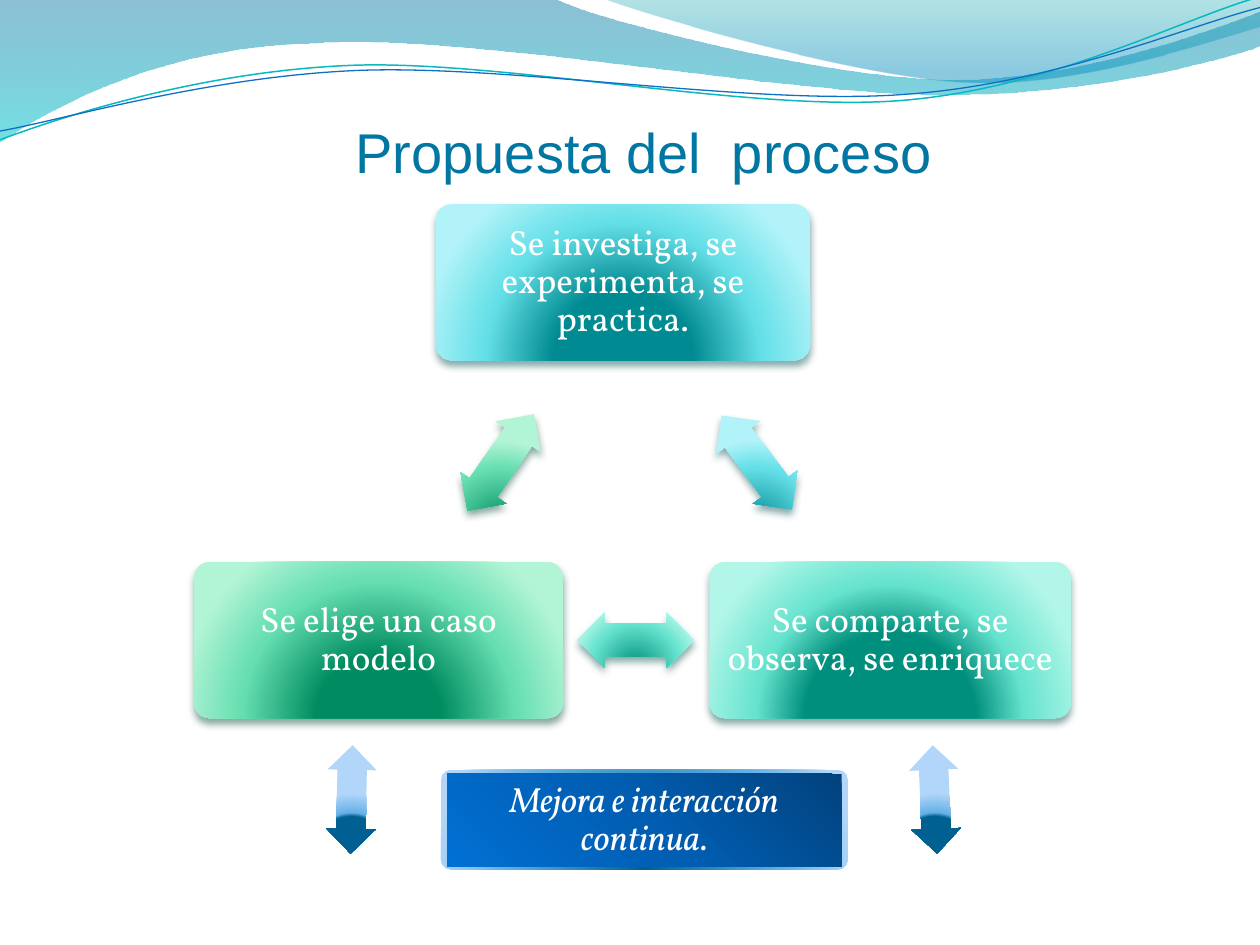
from dataclasses import dataclass

from lxml.etree import SubElement
from pptx import Presentation
from pptx.dml.color import RGBColor
from pptx.enum.shapes import MSO_SHAPE
from pptx.enum.text import MSO_ANCHOR, PP_ALIGN
from pptx.oxml.ns import qn
from pptx.util import Inches, Pt


@dataclass(frozen=True)
class Family:
    """Dark, middle and light gradient colours with their shadow."""
    dark: str
    mid: str
    light: str
    shadow: str = ""

    def stops(self, start):
        """Return gradient stops whose dark core ends at start percent."""
        return [(start, self.dark, 100), (68, self.mid, 100), (100, self.light, 100)]


@dataclass(frozen=True)
class Theme:
    """Colours, fonts and type sizes of the slide."""
    title: str = "0076A3"
    text: str = "FFFFFF"
    teal_line: str = "0AB8BF"
    blue_line: str = "0F6FC6"
    title_font: str = "Arial"
    body_font: str = "Vollkorn"
    title_size: int = 32
    body_size: int = 20
    cyan: Family = Family("008A91", "64DFE7", "B1F3F9", "024B4E")
    aqua: Family = Family("008F7C", "65E3CE", "B1F6E8", "034C44")
    green: Family = Family("008C60", "65DEB0", "B2F4D6", "044A37")
    blue: Family = Family("006091", "64B1E7", "B1D6F9")
    wave: tuple = ((0, "0074A1", 45), (100, "00C6CF", 55))
    crest: tuple = ((0, "00A1A9", 30), (80, "008BBF", 45))
    plate: tuple = ((0, "01427D", 100), (50, "015EB2", 100), (100, "0170D4", 100))


THEME = Theme()


def add_color(parent, color, alpha):
    """Append an RGB colour with an opacity in percent."""
    clr = SubElement(parent, qn("a:srgbClr"), val=color)
    if alpha < 100:
        SubElement(clr, qn("a:alpha"), val=str(alpha * 1000))


def set_gradient(sp, stops, angle=None):
    """Fill a shape linearly at an angle, or from a circle below it."""
    sp.fill.background()
    old = sp._element.spPr.find(qn("a:noFill"))
    grad = SubElement(sp._element.spPr, qn("a:gradFill"), rotWithShape="0")
    old.getparent().replace(old, grad)
    gs_list = SubElement(grad, qn("a:gsLst"))
    for pos, color, alpha in stops:
        add_color(SubElement(gs_list, qn("a:gs"), pos=str(pos * 1000)), color, alpha)
    if angle is None:
        circle = SubElement(grad, qn("a:path"), path="circle")
        SubElement(circle, qn("a:fillToRect"), l="50000", t="130000", r="50000", b="-30000")
    else:
        SubElement(grad, qn("a:lin"), ang=str(angle * 60000), scaled="0")


def add_shadow(sp, color):
    """Give a shape a soft shadow straight below."""
    effects = sp._element.spPr.find(qn("a:effectLst"))
    shadow = SubElement(effects, qn("a:outerShdw"), blurRad=str(Pt(4.5)), dist=str(Pt(3)),
                        dir="5400000", rotWithShape="0")
    add_color(shadow, color, 48)


def add_block(slide, kind, box, stops, angle=None, shadow=""):
    """Place a borderless gradient shape."""
    sp = slide.shapes.add_shape(kind, *map(Inches, box))
    sp.line.fill.background()
    sp.shadow.inherit = False
    set_gradient(sp, stops, angle)
    if shadow:
        add_shadow(sp, shadow)
    return sp


def add_card(slide, box, family, start):
    """Place a rounded card."""
    sp = add_block(slide, MSO_SHAPE.ROUNDED_RECTANGLE, box, family.stops(start),
                   shadow=family.shadow)
    sp.adjustments[0] = 0.1
    return sp


def add_arrow(slide, box, family, start, rotation):
    """Place a rotated double-headed arrow."""
    sp = add_block(slide, MSO_SHAPE.LEFT_RIGHT_ARROW, box, family.stops(start),
                   shadow=family.shadow)
    sp.adjustments[0], sp.adjustments[1] = 0.6, 0.5
    sp.rotation = rotation


def set_text(sp, text, italic=False):
    """Write centred body text in a shape."""
    tf = sp.text_frame
    tf.word_wrap = True
    tf.vertical_anchor = MSO_ANCHOR.MIDDLE
    tf.margin_left = tf.margin_right = Inches(0.05)
    tf.margin_top = tf.margin_bottom = Inches(0.08)
    p = tf.paragraphs[0]
    p.alignment = PP_ALIGN.CENTER
    p.line_spacing = 0.9
    r = p.add_run()
    r.text = text
    r.font.name, r.font.size = THEME.body_font, Pt(THEME.body_size)
    r.font.italic = italic
    r.font.color.rgb = RGBColor.from_string(THEME.text)


def add_outline(slide, origin, start, segments, close):
    """Draw an outline of lines (2 numbers) and cubic curves (6 numbers)."""
    pairs = [start] + [seg[i:i + 2] for seg in segments for i in range(0, len(seg), 2)]
    points = [(Inches(origin[0] + x), Inches(origin[1] + y)) for x, y in pairs]
    builder = slide.shapes.build_freeform(*points[0], scale=1.0)
    builder.add_line_segments(points[1:], close=close)
    sp = builder.convert_to_shape()
    sp.shadow.inherit = False
    steps = iter(list(sp._element.iter(qn("a:lnTo"))))
    for seg in segments:
        first = next(steps)
        if len(seg) == 6:
            first.tag = qn("a:cubicBezTo")
            for _ in range(2):
                step = next(steps)
                first.append(step[0])
                step.getparent().remove(step)
    return sp


def add_waves(slide, box):
    """Draw the wave band and its two lines along the top."""
    origin = box[:2]
    bands = [
        (THEME.wave, (0, 0), [
            (4.4, -0.01), (4.76, 0.17, 6.64, 0.63, 7.58, 0.63), (8.53, 0.63, 9.58, 0.26, 10, 0.09),
            (10.01, 0.36), (9.83, 0.44, 8.7, 0.76, 7.46, 0.75), (6.22, 0.75, 3.82, 0.28, 2.57, 0.34),
            (1.29, 0.36, 0.46, 0.83, -0.01, 1.13)]),
        (THEME.crest, (4.79, -0.01), [
            (5.09, 0.11, 6.82, 0.62, 7.69, 0.65), (8.56, 0.69, 9.61, 0.32, 10, 0.21), (10, 0)]),
    ]
    for stops, start, segments in bands:
        sp = add_outline(slide, origin, start, segments, True)
        sp.line.fill.background()
        set_gradient(sp, stops, 90)
    lines = [
        (THEME.teal_line, 0.85, (0, 1.11), [
            (0.48, 0.93, 1.58, 0.57, 2.77, 0.52), (3.95, 0.47, 5.93, 0.89, 7.13, 0.8),
            (8.33, 0.71, 9.38, 0.15, 9.98, -0.02)]),
        (THEME.blue_line, 0.75, (0, 1.04), [
            (0.47, 0.96, 1.64, 0.61, 2.83, 0.56), (4.03, 0.51, 5.97, 0.84, 7.17, 0.75),
            (8.36, 0.67, 9.41, 0.21, 10, 0.06)]),
    ]
    for color, width, start, segments in lines:
        sp = add_outline(slide, origin, start, segments, False)
        sp.fill.background()
        sp.line.color.rgb = RGBColor.from_string(color)
        sp.line.width = Pt(width)


def add_title(slide, box):
    """Move and format the title placeholder."""
    sp = slide.shapes.title
    sp.left, sp.top, sp.width, sp.height = map(Inches, box)
    tf = sp.text_frame
    tf.vertical_anchor = MSO_ANCHOR.BOTTOM
    tf.margin_left, tf.margin_right, tf.margin_bottom = Inches(1.36), 0, 0
    p = tf.paragraphs[0]
    p.alignment = PP_ALIGN.CENTER
    r = p.add_run()
    r.text = "Propuesta del  proceso"
    r.font.name, r.font.size = THEME.title_font, Pt(THEME.title_size)
    r.font.color.rgb = RGBColor.from_string(THEME.title)


def add_cycle(slide, box):
    """Build the three-step cycle with its arrows."""
    x, y, w, h = box
    card_h, low = 1.24, y + h - 1.24
    cards = [
        (x + 1.92, y, 2.97, THEME.cyan, 34, "Se investiga, se experimenta, se practica."),
        (x + w - 2.87, low, 2.87, THEME.aqua, 43, "Se comparte, se observa, se enriquece"),
        (x, low, 2.93, THEME.green, 31, "Se elige un caso modelo"),
    ]
    for left, top, width, family, start, text in cards:
        set_text(add_card(slide, (left, top, width, card_h), family, start), text)
    arrows = [(4, 1.83, THEME.cyan, 53.2), (3.04, 3.24, THEME.aqua, 180),
              (1.97, 1.83, THEME.green, 304.5)]
    for dx, dy, family, rotation in arrows:
        add_arrow(slide, (x + dx, y + dy, 0.93, 0.44), family, 0, rotation)


def add_improvement(slide, box):
    """Build the bottom plate between its two vertical arrows."""
    x, y, w, h = box
    arrow_w = 0.86
    for left, rotation in ((x, 91.1), (x + w - arrow_w, 87.6)):
        add_arrow(slide, (left, y + 0.04, arrow_w, 0.39), THEME.blue, 62, rotation)
    add_card(slide, (x + 1.14, y, 3.23, h), THEME.blue, 0)
    plate = add_block(slide, MSO_SHAPE.RECTANGLE, (x + 1.19, y + 0.03, 3.13, h - 0.05),
                      THEME.plate, 135)
    set_text(plate, "Mejora e interacción continua.", italic=True)


def main():
    """Build and save the presentation."""
    prs = Presentation()
    prs.slide_width, prs.slide_height = Inches(10), Inches(7.5)
    s = prs.slides.add_slide(prs.slide_layouts[5])
    add_waves(s, (0, 0, 10, 1.13))
    add_title(s, (0, 0.37, 8.86, 1.1))
    add_cycle(s, (1.54, 1.62, 6.96, 4.08))
    add_improvement(s, (2.36, 6.11, 5.49, 0.79))
    prs.save("out.pptx")


if __name__ == "__main__":
    main()
